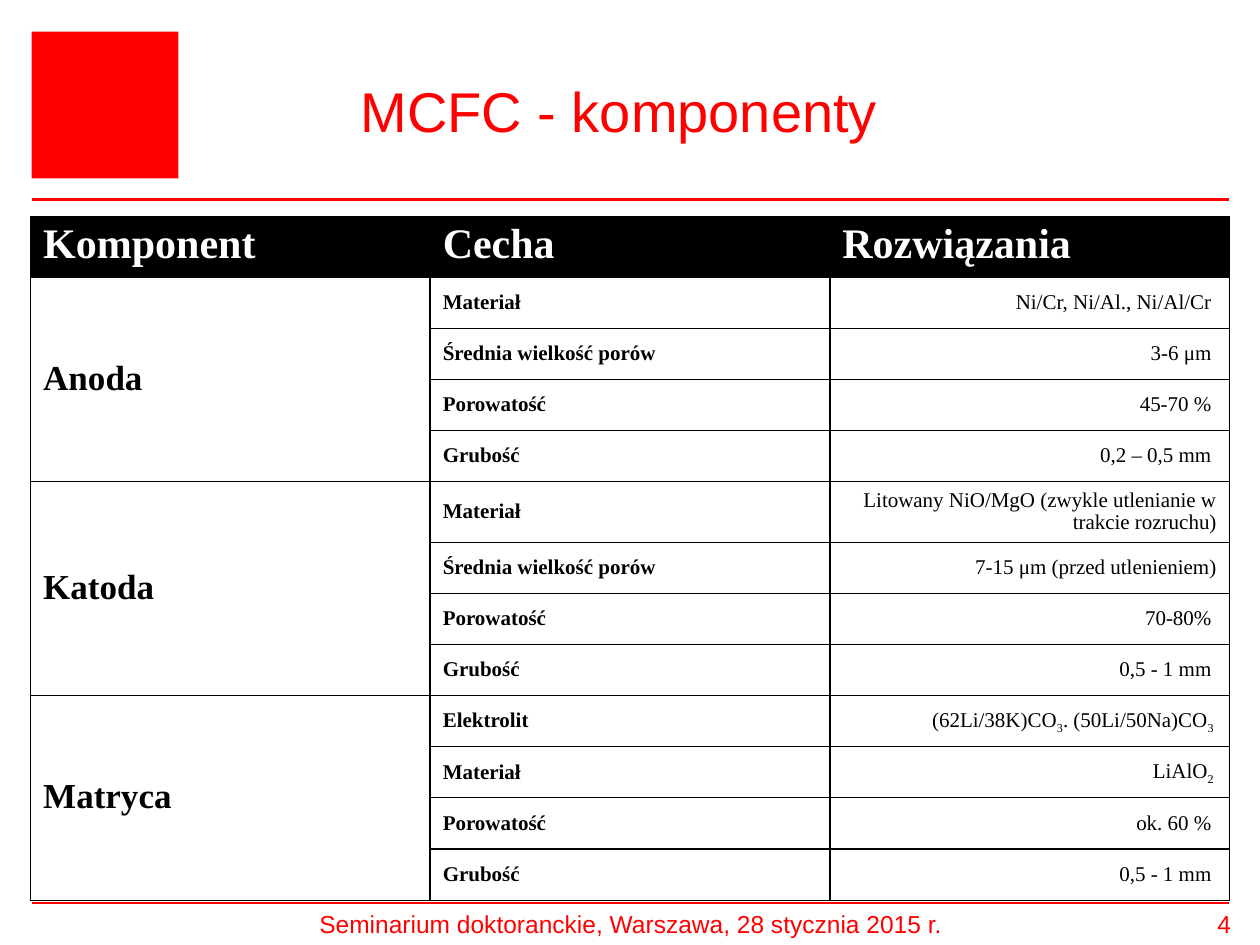
from dataclasses import dataclass

from lxml.etree import SubElement
from pptx import Presentation
from pptx.dml.color import RGBColor as RGB
from pptx.enum.shapes import MSO_CONNECTOR as Connector, MSO_SHAPE as Shape
from pptx.enum.text import MSO_ANCHOR as Anchor, PP_ALIGN as Align
from pptx.oxml import parse_xml
from pptx.oxml.ns import nsdecls, qn
from pptx.util import Pt


@dataclass(frozen=True)
class Theme:
    red: RGB = RGB(255, 0, 0)
    black: RGB = RGB(0, 0, 0)
    white: RGB = RGB(255, 255, 255)
    sans: str = "Arial"
    serif: str = "Times New Roman"
    title: float = 32
    header: float = 24
    group: float = 20
    body: float = 12
    footer: float = 14
    rule: float = 1.5
    spacing: float = 0.95
    borders: tuple = (("L", 1), ("R", 1), ("T", 0.75), ("B", 0.75))


HEADERS = ["Komponent", "Cecha", "Rozwiązania"]
# Underscores enclose subscripts.
COMPONENTS = {
    "Anoda": [
        ("Materiał", "Ni/Cr, Ni/Al., Ni/Al/Cr "),
        ("Średnia wielkość porów", "3-6 μm "),
        ("Porowatość", "45-70 % "),
        ("Grubość", "0,2 – 0,5 mm "),
    ],
    "Katoda": [
        ("Materiał", "Litowany NiO/MgO (zwykle utlenianie w trakcie rozruchu)"),
        ("Średnia wielkość porów", "7-15 μm (przed utlenieniem)"),
        ("Porowatość", "70-80% "),
        ("Grubość", "0,5 - 1 mm "),
    ],
    "Matryca": [
        ("Elektrolit", "(62Li/38K)CO_3_. (50Li/50Na)CO_3 _"),
        ("Materiał", "LiAlO_2 _"),
        ("Porowatość", "ok. 60 % "),
        ("Grubość", "0,5 - 1 mm "),
    ],
}


class SlideBuilder:
    def __init__(self, page, theme):
        self.page = page
        self.theme = theme

    def rule(self, left, right, top):
        line = self.page.shapes.add_connector(
            Connector.STRAIGHT, Pt(left), Pt(top), Pt(right), Pt(top))
        line.line.color.rgb = self.theme.red
        line.line.width = Pt(self.theme.rule)
        SubElement(line._element.spPr, qn("a:effectLst"))

    def square(self, left, top, side):
        shape = self.page.shapes.add_shape(
            Shape.RECTANGLE, Pt(left), Pt(top), Pt(side), Pt(side))
        shape.shadow.inherit = False
        shape.fill.solid()
        shape.fill.fore_color.rgb = self.theme.red
        shape.line.fill.background()

    def text(self, content, left, top, width, height, size,
             align=Align.CENTER, anchor=Anchor.TOP):
        box = self.page.shapes.add_textbox(Pt(left), Pt(top), Pt(width), Pt(height))
        frame = box.text_frame
        frame.word_wrap = True
        frame.vertical_anchor = anchor
        frame.text = content
        para = frame.paragraphs[0]
        para.alignment = align
        self.style(para.runs[0], size, self.theme.red, self.theme.sans)

    def style(self, span, size, color, font, bold=False):
        span.font.size = Pt(size)
        span.font.color.rgb = color
        span.font.name = font
        span.font.bold = bold

    def border(self, cell):
        properties = cell._tc.get_or_add_tcPr()
        for index, (side, width) in enumerate(self.theme.borders):
            properties.insert(index, parse_xml(
                f'<a:ln{side} {nsdecls("a")} w="{int(Pt(width))}"><a:solidFill>'
                f'<a:srgbClr val="{self.theme.black}"/></a:solidFill></a:ln{side}>'))

    def cell(self, cell, content, size, color, bold=True,
             align=Align.LEFT, anchor=Anchor.MIDDLE):
        cell.vertical_anchor = anchor
        para = cell.text_frame.paragraphs[0]
        para.alignment = align
        para.line_spacing = self.theme.spacing
        for index, piece in enumerate(content.split("_")):
            if not piece:
                continue
            span = para.add_run()
            span.text = piece
            self.style(span, size, color, self.theme.serif, bold)
            if index % 2:
                span._r.get_or_add_rPr().set("baseline", "-25000")

    def table(self, headers, groups, left, top, width, row_height):
        theme = self.theme
        row_count = 1 + sum(len(rows) for rows in groups.values())
        table = self.page.shapes.add_table(
            row_count, len(headers), Pt(left), Pt(top),
            Pt(width), Pt(row_height * row_count)).table
        table.first_row = table.horz_banding = False
        for cell in table.iter_cells():
            cell.fill.background()
            self.border(cell)
        for column, header in enumerate(headers):
            cell = table.cell(0, column)
            cell.fill.solid()
            cell.fill.fore_color.rgb = theme.black
            self.cell(cell, header, theme.header, theme.white, anchor=Anchor.TOP)
        first = 1
        for name, rows in groups.items():
            table.cell(first, 0).merge(table.cell(first + len(rows) - 1, 0))
            self.cell(table.cell(first, 0), name, theme.group, theme.black)
            for row, (feature, solution) in enumerate(rows, first):
                self.cell(table.cell(row, 1), feature, theme.body, theme.black)
                self.cell(table.cell(row, 2), solution, theme.body, theme.black,
                          bold=False, align=Align.RIGHT)
            first += len(rows)


def main():
    deck = Presentation()
    deck.slide_width, deck.slide_height = Pt(720), Pt(540)
    theme = Theme()
    builder = SlideBuilder(deck.slides.add_slide(deck.slide_layouts[6]), theme)
    for top in (114, 516):
        builder.rule(18, 702, top)
    builder.square(18, 18, 84)
    builder.text("MCFC - komponenty", 121.5, 18, 464.5, 90, theme.title,
                 anchor=Anchor.MIDDLE)
    builder.table(HEADERS, COMPONENTS, 17.5, 124, 685, 29.2)
    builder.text("Seminarium doktoranckie, Warszawa, 28 stycznia 2015 r.",
                 91.5, 516, 538, 24, theme.footer)
    builder.text("4", 678, 516, 32.5, 24, theme.footer, align=Align.RIGHT)
    deck.save("out.pptx")


if __name__ == "__main__":
    main()
